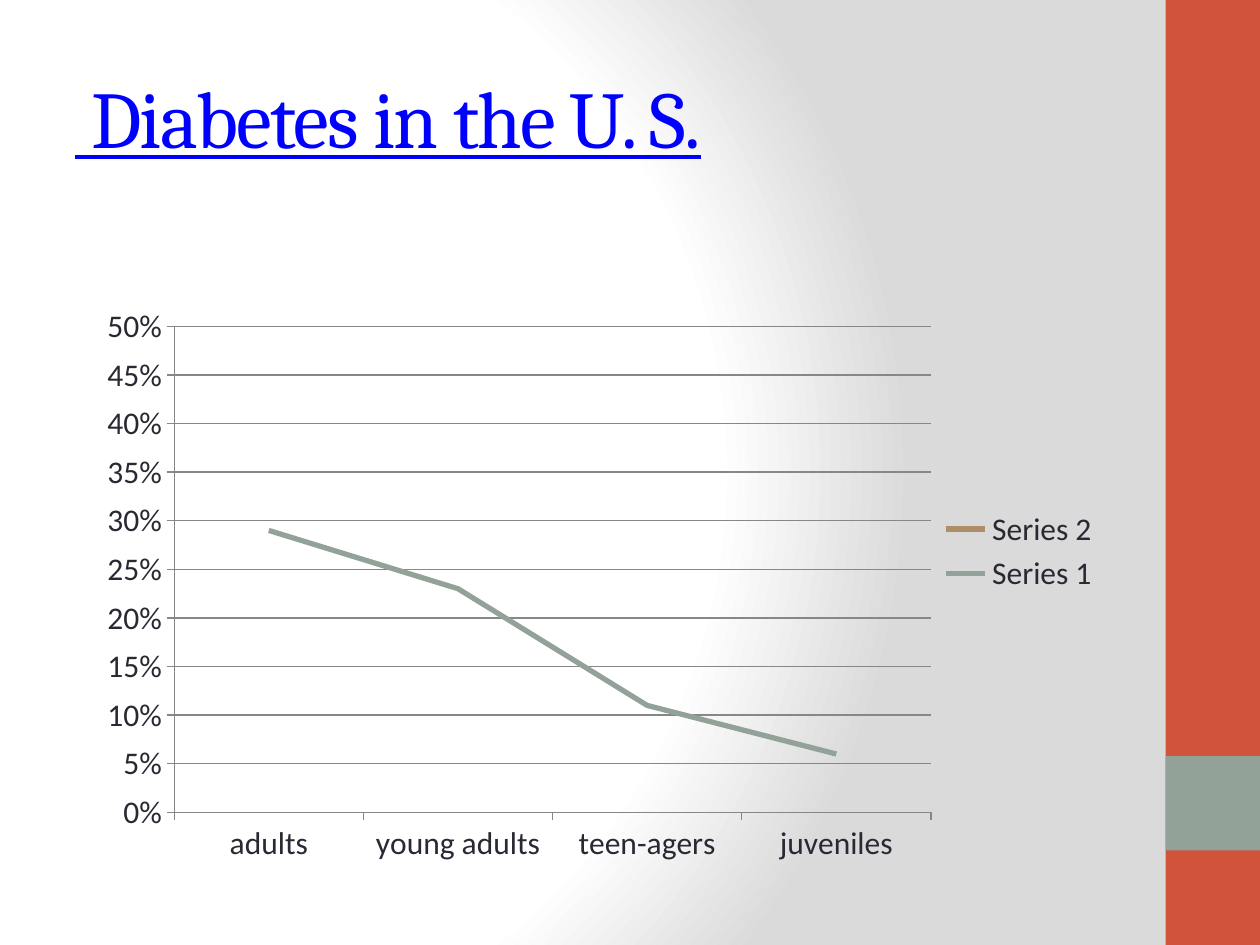
"""Build the slide on diabetes in the U. S. with its stacked line chart."""
from lxml import etree
from pptx import Presentation
from pptx.chart.data import CategoryChartData
from pptx.dml.color import RGBColor
from pptx.enum.chart import XL_CHART_TYPE, XL_LEGEND_POSITION, XL_MARKER_STYLE, XL_TICK_MARK
from pptx.enum.shapes import MSO_SHAPE
from pptx.enum.text import MSO_ANCHOR
from pptx.oxml import parse_xml
from pptx.oxml.ns import nsdecls, qn
from pptx.util import Inches, Pt

LINE_CHART = XL_CHART_TYPE.LINE_STACKED_100
LEGEND_RIGHT = XL_LEGEND_POSITION.RIGHT
NO_MARKER = XL_MARKER_STYLE.NONE
OUTSIDE = XL_TICK_MARK.OUTSIDE
RECTANGLE = MSO_SHAPE.RECTANGLE
MIDDLE = MSO_ANCHOR.MIDDLE

TITLE = " Diabetes in the U. S."
TITLE_BOX = (0.5, 0.3, 8.33, 1.25)
BANDS = [((9.25, 0, 0.75, 7.5), "D2533C"), ((9.25, 6, 0.75, 0.75), "93A299")]
BACKGROUND_STOPS = [(0, "FFFFFF"), (75, "FFFFFF"), (100, "DADADA")]
BACKGROUND_CENTER = {"l": 20, "t": 50, "r": 100, "b": 50}
CHART_BOX = (0.5, 1.75, 8.33, 5.25)
PLOT_AREA = {"x": 0.106, "y": 0.16, "w": 0.721, "h": 0.735}
CATEGORIES = ["adults", "young adults", "teen-agers", "juveniles"]
SERIES = [
    ("Series 1", (29, 23, 11, 6), "93A299"),
    ("Series 2", (71, 77, 89, 94), "AD8F67"),
]
TEXT_COLOR, AXIS_COLOR = "292934", "878787"


def color(value):
    return RGBColor.from_string(value)


def box(values):
    return [Inches(value) for value in values]


def format_font(font, name, size, fill):
    font.name = name
    font.size = Pt(size)
    font.color.rgb = color(fill)


def format_line(line, fill, width):
    line.color.rgb = color(fill)
    line.width = Pt(width)


def add_text(slide, text, area, name, size, fill, underline=False, spacing=0):
    frame = slide.shapes.add_textbox(*box(area)).text_frame
    frame.word_wrap = True
    frame.vertical_anchor = MIDDLE
    run = frame.paragraphs[0].add_run()
    run.text = text
    format_font(run.font, name, size, fill)
    run.font.underline = underline
    run.font._element.set("spc", str(spacing * 100))


def add_band(slide, area, fill):
    shape = slide.shapes.add_shape(RECTANGLE, *box(area))
    shape.shadow.inherit = False
    shape.fill.solid()
    shape.fill.fore_color.rgb = color(fill)
    shape.line.fill.background()


def set_background(slide):
    slide.background.fill.solid()
    solid = slide.element.xpath("p:cSld/p:bg/p:bgPr/a:solidFill")[0]
    stops = "".join(
        f'<a:gs pos="{position * 1000}"><a:srgbClr val="{fill}"/></a:gs>'
        for position, fill in BACKGROUND_STOPS
    )
    center = " ".join(f'{side}="{value * 1000}"' for side, value in BACKGROUND_CENTER.items())
    gradient = parse_xml(
        f'<a:gradFill {nsdecls("a")} rotWithShape="1"><a:gsLst>{stops}</a:gsLst>'
        f'<a:path path="circle"><a:fillToRect {center}/></a:path></a:gradFill>'
    )
    solid.getparent().replace(solid, gradient)


def set_plot_area(chart):
    plot_area = chart._chartSpace.chart.plotArea
    for layout in plot_area.findall(qn("c:layout")):
        plot_area.remove(layout)
    layout = etree.Element(qn("c:layout"))
    manual = etree.SubElement(layout, qn("c:manualLayout"))
    settings = {"layoutTarget": "inner", "xMode": "edge", "yMode": "edge", **PLOT_AREA}
    for tag, value in settings.items():
        etree.SubElement(manual, qn(f"c:{tag}")).set("val", str(value))
    plot_area.insert(0, layout)


def add_line_chart(slide):
    data = CategoryChartData()
    data.categories = CATEGORIES
    for name, values, _ in SERIES:
        data.add_series(name, values)
    chart = slide.shapes.add_chart(LINE_CHART, *box(CHART_BOX), data).chart
    format_font(chart.font, "Calibri", 18, TEXT_COLOR)
    chart.has_title = False
    chart.has_legend = True
    chart.legend.position = LEGEND_RIGHT
    chart.legend.include_in_layout = False
    chart.plots[0].vary_by_categories = False
    for series, (_, _, fill) in zip(chart.plots[0].series, SERIES):
        series.smooth = False
        series.marker.style = NO_MARKER
        format_line(series.format.line, fill, 3)
    for axis in (chart.category_axis, chart.value_axis):
        axis.major_tick_mark = OUTSIDE
        format_line(axis.format.line, AXIS_COLOR, 0.75)
    scale = chart.value_axis
    scale.minimum_scale, scale.maximum_scale, scale.major_unit = 0, 0.5, 0.05
    scale.tick_labels.number_format = "0%"
    scale.tick_labels.number_format_is_linked = False
    scale.has_major_gridlines = True
    format_line(scale.major_gridlines.format.line, AXIS_COLOR, 0.75)
    set_plot_area(chart)


def main():
    presentation = Presentation()
    presentation.slide_width, presentation.slide_height = Inches(10), Inches(7.5)
    slide = presentation.slides.add_slide(presentation.slide_layouts[6])
    set_background(slide)
    for area, fill in BANDS:
        add_band(slide, area, fill)
    add_text(slide, TITLE, TITLE_BOX, name="Cambria", size=46, fill="0000FF",
             underline=True, spacing=-1)
    add_line_chart(slide)
    presentation.save("out.pptx")


if __name__ == "__main__":
    main()
